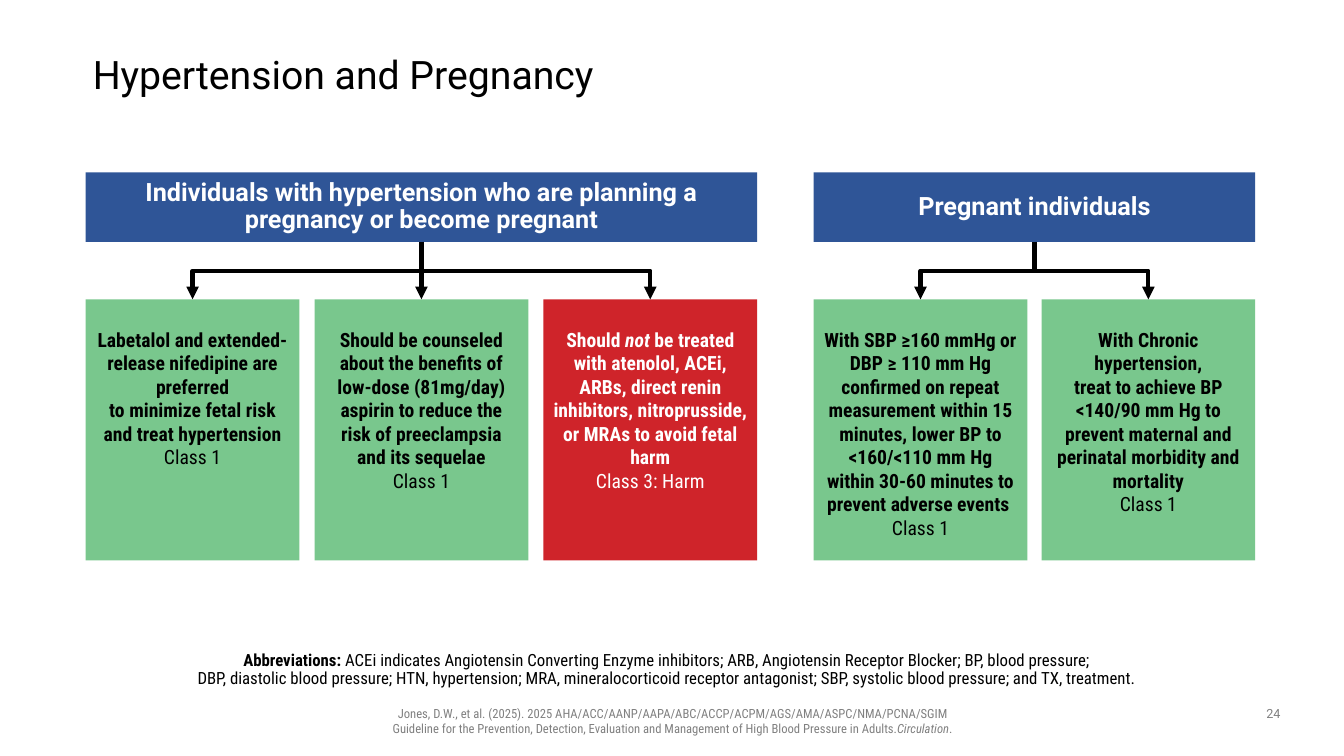
from copy import deepcopy

from lxml import etree
from pptx import Presentation
from pptx.dml.color import RGBColor
from pptx.enum.shapes import MSO_CONNECTOR as CONN, MSO_SHAPE as SHAPE
from pptx.enum.text import MSO_ANCHOR as ANCHOR, PP_ALIGN as ALIGN
from pptx.oxml.ns import qn
from pptx.util import Pt

PX = 9144  # 100 px to the inch
ROBOTO, CONDENSED = "Roboto", "Roboto Condensed"
BLUE, GREEN, RED = "2F5597", "79C78D", "CF242A"
BLACK, WHITE, GRAY = "000000", "FFFFFF", "808080"
HEADER_H, CARD_TOP, CARD_W, CARD_H = 69, 126, 212, 259

# Each paragraph is a list of (text, style); style holds "b" and/or "i"
PLANNING_CARDS = [
    (GREEN, BLACK, [
        [("Labetalol and extended-release nifedipine are preferred", "b")],
        [("to minimize fetal risk and treat hypertension", "b")],
        [("Class 1", "")]]),
    (GREEN, BLACK, [
        [("Should be counseled about the benefits of\nlow-dose (81mg/day) aspirin "
          "to reduce the risk of preeclampsia and its sequelae", "b")],
        [("Class 1", "")]]),
    (RED, WHITE, [
        [("Should ", "b"), ("not", "bi"),
         (" be treated with atenolol, ACEi, ARBs, direct renin inhibitors, "
          "nitroprusside, or MRAs to avoid fetal harm", "b")],
        [("Class 3: Harm", "")]]),
]
PREGNANT_CARDS = [
    (GREEN, BLACK, [
        [("With SBP ≥160 mmHg or DBP ≥ 110 mm Hg confirmed on repeat measurement "
          "within 15 minutes, lower BP to <160/<110 mm Hg within 30-60 minutes to "
          "prevent adverse events ", "b")],
        [("Class 1", "")]]),
    (GREEN, BLACK, [
        [("With Chronic hypertension,", "b")],
        [("treat to achieve BP <140/90 mm Hg to prevent maternal and perinatal "
          "morbidity and mortality", "b")],
        [("Class 1", "")]]),
]
ABBREVIATIONS = [[
    ("Abbreviations: ", "b"),
    ("ACEi indicates Angiotensin Converting Enzyme inhibitors; ARB, Angiotensin "
     "Receptor Blocker; BP, blood pressure;\nDBP, diastolic blood pressure; HTN, "
     "hypertension; MRA, mineralocorticoid receptor antagonist; SBP, systolic blood "
     "pressure; and TX, treatment.", "")]]
CITATION = [[
    ("Jones, D.W., et al. (2025). 2025 AHA/ACC/AANP/AAPA/ABC/ACCP/ACPM/AGS/AMA/ASPC/"
     "NMA/PCNA/SGIM\nGuideline for the Prevention, Detection, Evaluation and "
     "Management of High Blood Pressure in Adults.", ""),
    ("Circulation", "i"), (".", "")]]


def rgb(color):
    return RGBColor.from_string(color)


def emu(*lengths):
    return [round(v * PX) for v in lengths]


def write(tf, paragraphs, font, size, color, align=ALIGN.CENTER, spacing=None,
          margins=(10, 5, 10, 5), anchor=ANCHOR.TOP):
    tf.word_wrap = True
    tf.vertical_anchor = anchor
    tf.margin_left, tf.margin_top, tf.margin_right, tf.margin_bottom = emu(*margins)
    for i, parts in enumerate(paragraphs):
        p = tf.add_paragraph() if i else tf.paragraphs[0]
        p.alignment, p.line_spacing = align, spacing
        for text, style in parts:
            for n, line in enumerate(text.split("\n")):
                if n:
                    p.add_line_break()
                r = p.add_run()
                r.text = line
                r.font.name, r.font.size = font, Pt(size)
                r.font.bold, r.font.italic = "b" in style, "i" in style
                r.font.color.rgb = rgb(color)
        # Line breaks take the format of the text around them
        for br in p._p.findall(qn("a:br")):
            br.insert(0, deepcopy(p.runs[0].font._element))


def add_box(s, box, fill):
    sp = s.shapes.add_shape(SHAPE.RECTANGLE, *emu(*box))
    sp.shadow.inherit = False
    sp.fill.solid()
    sp.fill.fore_color.rgb = rgb(fill)
    sp.line.fill.background()
    return sp.text_frame


def add_text(s, box, paragraphs, font, size, color, **layout):
    tb = s.shapes.add_textbox(*emu(*box))
    write(tb.text_frame, paragraphs, font, size, color, **layout)


def add_arrow(s, x1, y1, x2, y2):
    """Arrow going down, then sideways, then down again."""
    if x1 == x2:
        cn = s.shapes.add_connector(CONN.STRAIGHT, *emu(x1, y1, x2, y2))
    else:
        # An elbow starts sideways, so turn it a quarter about its centre
        cx, cy = (x1 + x2) / 2, (y1 + y2) / 2
        half_w, half_h = (y2 - y1) / 2, abs(x2 - x1) / 2
        right = x2 > x1
        if right:
            half_w = -half_w
        cn = s.shapes.add_connector(CONN.ELBOW, *emu(
            cx - half_w, cy - half_h, cx + half_w, cy + half_h))
        cn._element.spPr.find(qn("a:xfrm")).set("rot", str((270 if right else 90) * 60000))
    cn.line.color.rgb = rgb(BLACK)
    cn.line.width = Pt(3)
    etree.SubElement(cn.line._get_or_add_ln(), qn("a:tailEnd"), type="triangle")
    etree.SubElement(cn._element.spPr, qn("a:effectLst"))


def add_title(s, box, text):
    title = s.shapes.title
    title.left, title.top, title.width, title.height = emu(*box)
    write(title.text_frame, [[(text, "")]], ROBOTO, 28, BLACK, align=ALIGN.LEFT,
          spacing=0.9, margins=(0, 0, 0, 0), anchor=ANCHOR.MIDDLE)


def add_branch(s, x, y, w, heading, cards):
    """Header with arrows to a row of evenly spread cards."""
    tf = add_box(s, (x, y, w, HEADER_H), BLUE)
    write(tf, [[(heading, "b")]], ROBOTO, 18, WHITE, spacing=0.9,
          margins=(0, 0, 0, 0), anchor=ANCHOR.MIDDLE)
    pitch = (w - CARD_W) / (len(cards) - 1)
    for i, (fill, color, paragraphs) in enumerate(cards):
        left = x + i * pitch
        tf = add_box(s, (left, y + CARD_TOP, CARD_W, CARD_H), fill)
        write(tf, paragraphs, CONDENSED, 14, color, margins=(10, 28, 10, 5))
        add_arrow(s, x + w / 2, y + HEADER_H, left + CARD_W / 2, y + CARD_TOP)


def add_footer(s):
    add_text(s, (188, 642, 957, 46), ABBREVIATIONS, CONDENSED, 12, BLACK,
             spacing=0.9, margins=(0, 5, 10, 5), anchor=ANCHOR.BOTTOM)
    add_text(s, (236, 695, 862, 40), CITATION, CONDENSED, 9, GRAY)
    add_text(s, (1242, 695, 42, 26), [[("24", "")]], ROBOTO, 9, GRAY)


def main():
    prs = Presentation()
    prs.slide_width, prs.slide_height = emu(1333, 750)
    s = prs.slides.add_slide(prs.slide_layouts[5])
    add_title(s, (92, 40, 1150, 72), "Hypertension and Pregnancy")
    add_branch(s, 85, 171, 666, "Individuals with hypertension who are planning a "
               "pregnancy or become pregnant", PLANNING_CARDS)
    add_branch(s, 807, 171, 438, "Pregnant individuals", PREGNANT_CARDS)
    add_footer(s)
    prs.save("out.pptx")


if __name__ == "__main__":
    main()
